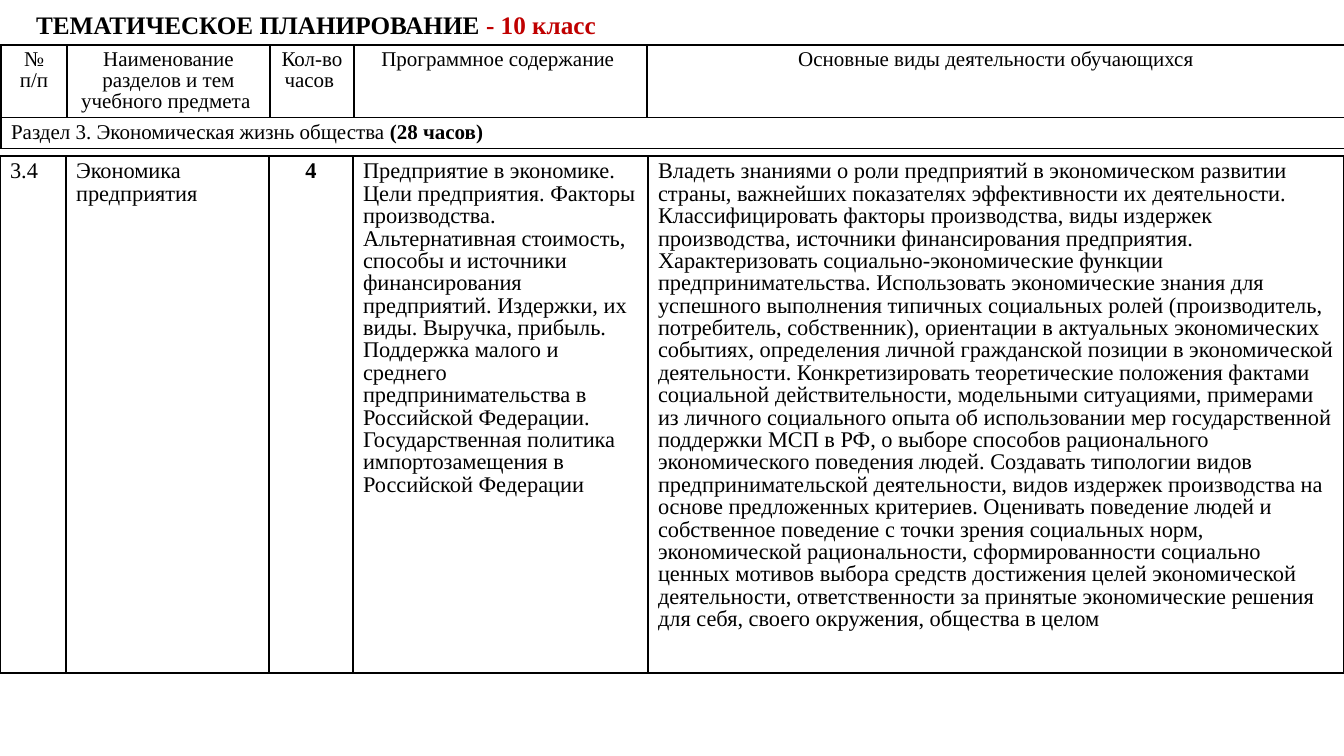
from lxml.etree import SubElement
from pptx import Presentation
from pptx.dml.color import RGBColor
from pptx.enum.text import MSO_ANCHOR, MSO_AUTO_SIZE, PP_ALIGN
from pptx.oxml import parse_xml
from pptx.oxml.ns import nsdecls
from pptx.util import Emu, Pt

PX = 12192000 / 1344
BLACK = RGBColor(0x00, 0x00, 0x00)
WHITE = RGBColor(0xFF, 0xFF, 0xFF)
RED = RGBColor(0xC0, 0x00, 0x00)
FONT = "Times New Roman"
LEFT, CENTER = PP_ALIGN.LEFT, PP_ALIGN.CENTER


def write(text_frame, runs, size, align):
    """Fill the first paragraph with (text, bold, colour) runs."""
    paragraph = text_frame.paragraphs[0]
    paragraph.alignment = align
    for text, bold, colour in runs:
        run = paragraph.add_run()
        run.text = text
        run.font.name = FONT
        run.font.size = Pt(size)
        run.font.bold = bold
        run.font.color.rgb = colour
    return paragraph


def add_grid(slide, left, top, widths, heights, rows, size):
    """Add a white table with thin black borders; rows hold (runs, align) cells."""
    frame = slide.shapes.add_table(
        len(heights), len(widths), Emu(round(left * PX)), Emu(round(top * PX)),
        Emu(round(sum(widths) * PX)), Emu(round(sum(heights) * PX)))
    table = frame.table
    table.first_row = table.horz_banding = False
    for column, width in zip(table.columns, widths):
        column.width = Emu(round(width * PX))
    for row, height in zip(table.rows, heights):
        row.height = Emu(round(height * PX))
    for row, contents in zip(table.rows, rows):
        for cell, (runs, align) in zip(row.cells, contents):
            write(cell.text_frame, runs, size, align).line_spacing = 0.9
        for cell in row.cells:
            cell.fill.solid()
            cell.fill.fore_color.rgb = WHITE
            properties = cell._tc.get_or_add_tcPr()
            for index, side in enumerate(("lnL", "lnR", "lnT", "lnB")):
                line = parse_xml(f'<a:{side} {nsdecls("a")} w="12700"><a:solidFill/></a:{side}>')
                SubElement(line[0], line[0].tag.replace("solidFill", "srgbClr"), val=str(BLACK))
                properties.insert(index, line)
    return table


presentation = Presentation()
presentation.slide_width = Emu(round(1344 * PX))
presentation.slide_height = Emu(round(756 * PX))
slide = presentation.slides.add_slide(presentation.slide_layouts[5])

# Title
title = slide.shapes.title
title.left, title.top, title.width, title.height = (
    Emu(round(length * PX)) for length in (26, 4, 671, 40))
title.text_frame.auto_size = MSO_AUTO_SIZE.NONE
title.text_frame.vertical_anchor = MSO_ANCHOR.TOP
title.text_frame.word_wrap = True
write(title.text_frame, [("ТЕМАТИЧЕСКОЕ ПЛАНИРОВАНИЕ ", True, BLACK),
                         ("- 10 класс", True, RED)], 18, LEFT)

# Column headings and section row
headings = [
    "№ п/п",
    "Наименование разделов и тем учебного предмета ",
    "Кол-во часов ",
    "Программное содержание ",
    "Основные виды деятельности обучающихся",
]
section = [("Раздел 3. Экономическая жизнь общества ", False, BLACK),
           ("(28 часов)", True, BLACK)]
heading_row = [([(text, False, BLACK)], CENTER) for text in headings]
heading_table = add_grid(slide, 1, 45, [66, 203, 84, 293, 698], [72, 31],
                         [heading_row, [(section, LEFT)]], 15)
heading_table.cell(1, 0).merge(heading_table.cell(1, 4))

# Topic row
content = (
    "Предприятие в экономике. Цели предприятия. Факторы производства. "
    "Альтернативная стоимость, способы и источники финансирования предприятий. "
    "Издержки, их виды. Выручка, прибыль. Поддержка малого и среднего "
    "предпринимательства в Российской Федерации. Государственная политика "
    "импортозамещения в Российской Федерации")
activities = [
    "Владеть знаниями о роли предприятий в экономическом развитии страны, "
    "важнейших показателях эффективности их деятельности.",
    "Классифицировать факторы производства, виды издержек производства, "
    "источники финансирования предприятия.",
    "Характеризовать социально-экономические функции предпринимательства.",
    "Использовать экономические знания для успешного выполнения типичных "
    "социальных ролей (производитель, потребитель, собственник), ориентации в "
    "актуальных экономических событиях, определения личной гражданской позиции "
    "в экономической деятельности.",
    "Конкретизировать теоретические положения фактами социальной "
    "действительности, модельными ситуациями, примерами из личного социального "
    "опыта об использовании мер государственной поддержки МСП в РФ, о выборе "
    "способов рационального экономического поведения людей.",
    "Создавать типологии видов предпринимательской деятельности, видов издержек "
    "производства на основе предложенных критериев.",
    "Оценивать поведение людей и собственное поведение с точки зрения социальных "
    "норм, экономической рациональности, сформированности социально ценных "
    "мотивов выбора средств достижения целей экономической деятельности, "
    "ответственности за принятые экономические решения для себя, своего "
    "окружения, общества в целом",
]
topic_row = [
    ([(text, bold, BLACK)], align)
    for text, bold, align in [
        ("3.4", False, LEFT),
        ("Экономика предприятия", False, LEFT),
        ("4", True, CENTER),
        (content, False, LEFT),
        (" ".join(activities), False, LEFT),
    ]
]
add_grid(slide, 0, 156, [66, 203, 84, 295, 696], [517], [topic_row], 16)

presentation.save("out.pptx")
